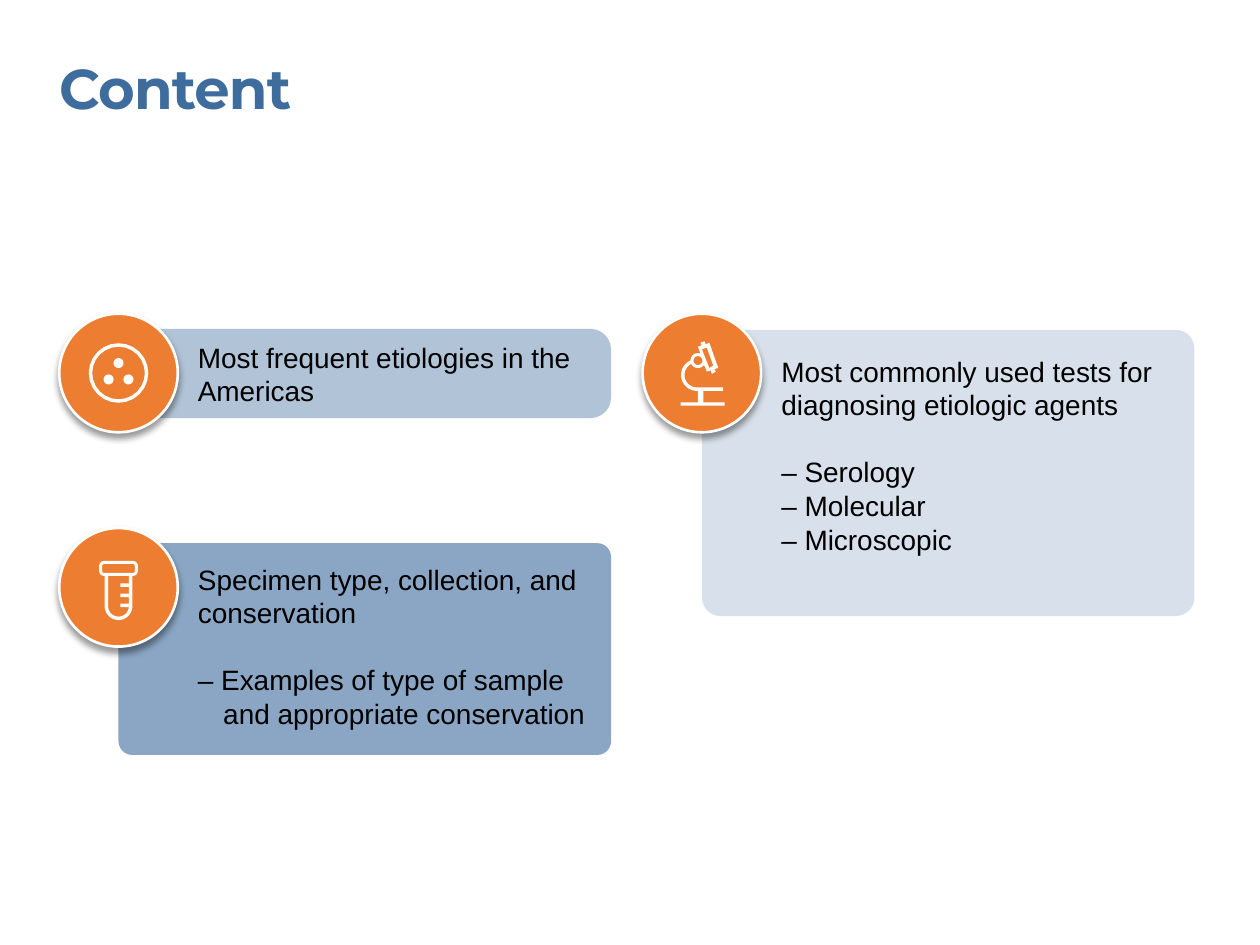
import math

import lxml.etree
import pptx
import pptx.dml.color
import pptx.enum.shapes
import pptx.enum.text
import pptx.oxml.ns
import pptx.util
from pptx.util import Cm

BLUE = pptx.dml.color.RGBColor(0x3D, 0x6C, 0x9D)
ORANGE = pptx.dml.color.RGBColor(0xED, 0x7D, 0x31)
WHITE = pptx.dml.color.RGBColor(0xFF, 0xFF, 0xFF)
BLACK = pptx.dml.color.RGBColor(0x00, 0x00, 0x00)
SHAPES = pptx.enum.shapes.MSO_SHAPE
qn = pptx.oxml.ns.qn


def arc(x, y, radius, start, end, steps=24):
    angles = [math.radians(start + (end - start) * i / steps) for i in range(steps + 1)]
    return [(x + radius * math.cos(a), y + radius * math.sin(a)) for a in angles]


def petri_dish():
    rings = [(0, 0, 0.6), (0, 0, 0.53), (0, -0.2, 0.1), (-0.2, 0.13, 0.1), (0.2, 0.13, 0.1)]
    return [arc(*ring, 0, 360) for ring in rings]


def microscope():
    arm, lens = (-0.1, 0.04), (-0.08, -0.25)
    outline = (
        [(-0.43, 0.66), (-0.43, 0.59), (-0.08, 0.59), (-0.08, 0.36)]
        + arc(*arm, 0.32, 90, 252)
        + arc(*lens, 0.15, 180, 290)
        + [(-0.08, -0.53), (0, -0.56), (-0.03, -0.61), (0.05, -0.64), (0.08, -0.58),
           (0.15, -0.61), (0.33, -0.1), (0.25, -0.08), (0.28, -0.03), (0.2, 0.02),
           (0.18, -0.05), (0.1, -0.03), (0.05, -0.15)]
        + arc(*lens, 0.15, 40, 150)
        + arc(*arm, 0.25, 252, 90)
        + [(0.43, 0.29), (0.43, 0.36), (0.03, 0.36), (0.03, 0.59), (0.46, 0.59), (0.46, 0.66)]
    )
    eyepiece = [(0.15, -0.1), (0.23, -0.15), (0.1, -0.51), (0, -0.48)]
    return [outline, eyepiece, arc(*lens, 0.09, 0, 360)]


def test_tube():
    def cap(radius, body):
        return (
            arc(-0.29, -0.43, radius, 180, 270)
            + arc(0.29, -0.43, radius, 270, 360)
            + arc(0.29, -0.33, radius, 0, 90)
            + body
            + arc(-0.29, -0.33, radius, 90, 180)
        )

    body = [(0.28, -0.23)] + arc(0, 0.38, 0.28, 0, 180) + [(-0.28, -0.23)]
    inside = [(-0.21, -0.23), (0.21, -0.23)]
    for mark in (-0.08, 0.13, 0.33):
        inside += [(0.21, mark), (0.04, mark), (0.04, mark + 0.07), (0.21, mark + 0.07)]
    inside += arc(0, 0.38, 0.21, 8, 180)
    return [cap(0.1, body), cap(0.04, []), inside]


class Deck:
    text_font = "Arial"
    title_font = "Montserrat"
    text_size = pptx.util.Pt(16)
    line_pitch = pptx.util.Pt(19.2)
    badge_size = 2.39

    def __init__(self):
        self.presentation = pptx.Presentation()
        self.presentation.slide_width = Cm(25.4)
        self.presentation.slide_height = Cm(19.05)
        self.slide = self.presentation.slides.add_slide(self.presentation.slide_layouts[3])
        self.shapes = self.slide.shapes

    def paint(self, shape, color):
        shape.shadow.inherit = False
        shape.fill.solid()
        shape.fill.fore_color.rgb = color
        shape.line.fill.background()

    def place(self, holder, left, top, width, height):
        holder.left, holder.top, holder.width, holder.height = map(Cm, (left, top, width, height))
        self.shapes._spTree.append(holder._element)
        frame = holder.text_frame
        frame.word_wrap = True
        frame.auto_size = pptx.enum.text.MSO_AUTO_SIZE.NONE
        frame.vertical_anchor = pptx.enum.text.MSO_ANCHOR.TOP
        frame.margin_left = frame.margin_top = frame.margin_right = frame.margin_bottom = 0
        return frame

    def add_run(self, paragraph, words, font, size, color):
        paragraph.alignment = pptx.enum.text.PP_ALIGN.LEFT
        run = paragraph.add_run()
        run.text = words
        run.font.name, run.font.size = font, size
        run.font.color.rgb = color
        return run

    def title(self, words):
        frame = self.place(self.shapes.title, 1.19, 1.07, 21.72, 1.37)
        run = self.add_run(frame.paragraphs[0], words, self.title_font, pptx.util.Pt(32), BLUE)
        run.font.bold = True
        run._r.get_or_add_rPr().set("spc", "-50")

    def card(self, left, top, height, rounding, opacity):
        card = self.shapes.add_shape(
            SHAPES.ROUNDED_RECTANGLE, Cm(left), Cm(top), Cm(9.93), Cm(height))
        card.adjustments[0] = rounding
        self.paint(card, BLUE)
        color = card._element.spPr.find(qn("a:solidFill"))[0]
        lxml.etree.SubElement(color, qn("a:alpha"), val=str(opacity * 1000))

    def topic(self, holder, box, heading, details=(), hanging=0):
        holder = holder or self.shapes.add_textbox(0, 0, Cm(1), Cm(1))
        frame = self.place(holder, *box)
        for number, words in enumerate([heading, *details]):
            paragraph = frame.add_paragraph() if number else frame.paragraphs[0]
            indent = Cm(hanging) if number else 0
            properties = paragraph._p.get_or_add_pPr()
            properties.set("marL", str(indent))
            properties.set("indent", str(-indent))
            paragraph.line_spacing = self.line_pitch
            paragraph.space_before = self.line_pitch if number == 1 else 0
            lxml.etree.SubElement(properties, qn("a:buNone"))
            self.add_run(paragraph, words, self.text_font, self.text_size, BLACK)

    def badge(self, x, y, contours):
        radius = self.badge_size / 2
        badge = self.shapes.add_shape(
            SHAPES.OVAL, Cm(x - radius), Cm(y - radius), Cm(self.badge_size), Cm(self.badge_size))
        self.paint(badge, ORANGE)
        badge.line.color.rgb = WHITE
        badge.line.width = pptx.util.Pt(1.5)
        shadow = lxml.etree.SubElement(
            badge._element.spPr.find(qn("a:effectLst")), qn("a:outerShdw"),
            blurRad=str(pptx.util.Pt(4)), dist=str(pptx.util.Pt(3)), dir="5400000",
            algn="ctr", rotWithShape="0")
        color = lxml.etree.SubElement(shadow, qn("a:srgbClr"), val=str(BLACK))
        lxml.etree.SubElement(color, qn("a:alpha"), val="40000")
        self.icon(x, y, contours)

    def icon(self, x, y, contours):
        builder = None
        for contour in contours:
            points = [((x + dx) * 1000, (y + dy) * 1000) for dx, dy in contour]
            if builder is None:
                builder = self.shapes.build_freeform(*points[0], scale=Cm(0.001))
            else:
                builder.move_to(*points[0])
            builder.add_line_segments(points[1:], close=True)
        self.paint(builder.convert_to_shape(), WHITE)


def main():
    deck = Deck()
    specimens, tests = deck.slide.placeholders[1], deck.slide.placeholders[2]
    left, right, upper, lower = 2.39, 14.15, 7.52, 11.84

    deck.card(left, 6.63, 1.8, 0.231, 40)
    deck.card(right, 6.65, 5.77, 0.065, 20)
    deck.card(left, 10.95, 4.27, 0.065, 60)

    deck.title("Content")
    deck.topic(None, (3.99, 6.86, 7.65, 1.37), "Most frequent etiologies in the Americas")
    deck.topic(tests, (15.75, 7.14, 7.87, 4.11),
               "Most commonly used tests for diagnosing etiologic agents",
               ["– Serology", "– Molecular", "– Microscopic"])
    deck.topic(specimens, (3.99, 11.33, 8, 3.43),
               "Specimen type, collection, and conservation",
               ["– Examples of type of sample and appropriate conservation"], hanging=0.51)

    deck.badge(left, upper, petri_dish())
    deck.badge(right, upper, microscope())
    deck.badge(left, lower, test_tube())
    deck.presentation.save("out.pptx")


if __name__ == "__main__":
    main()
